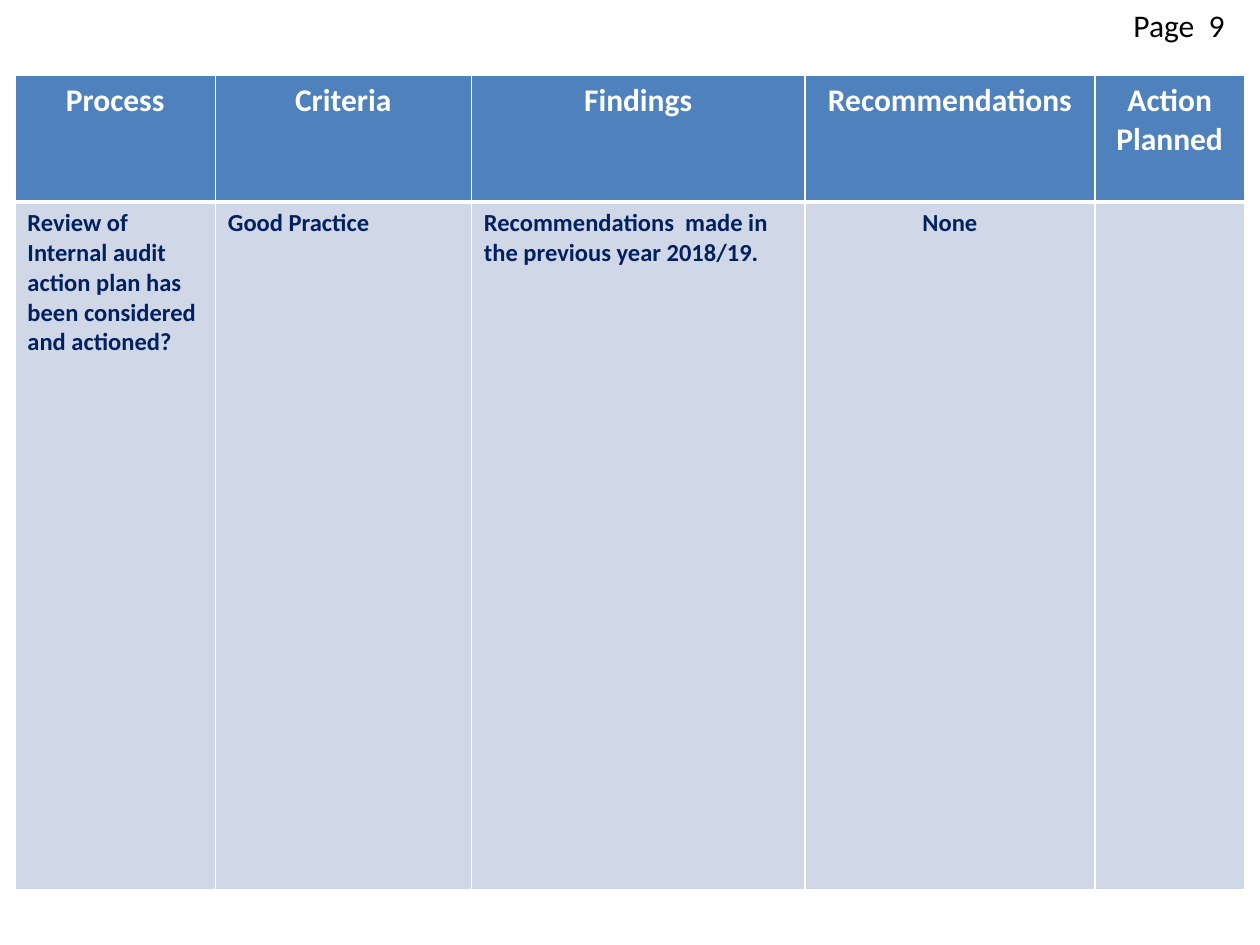
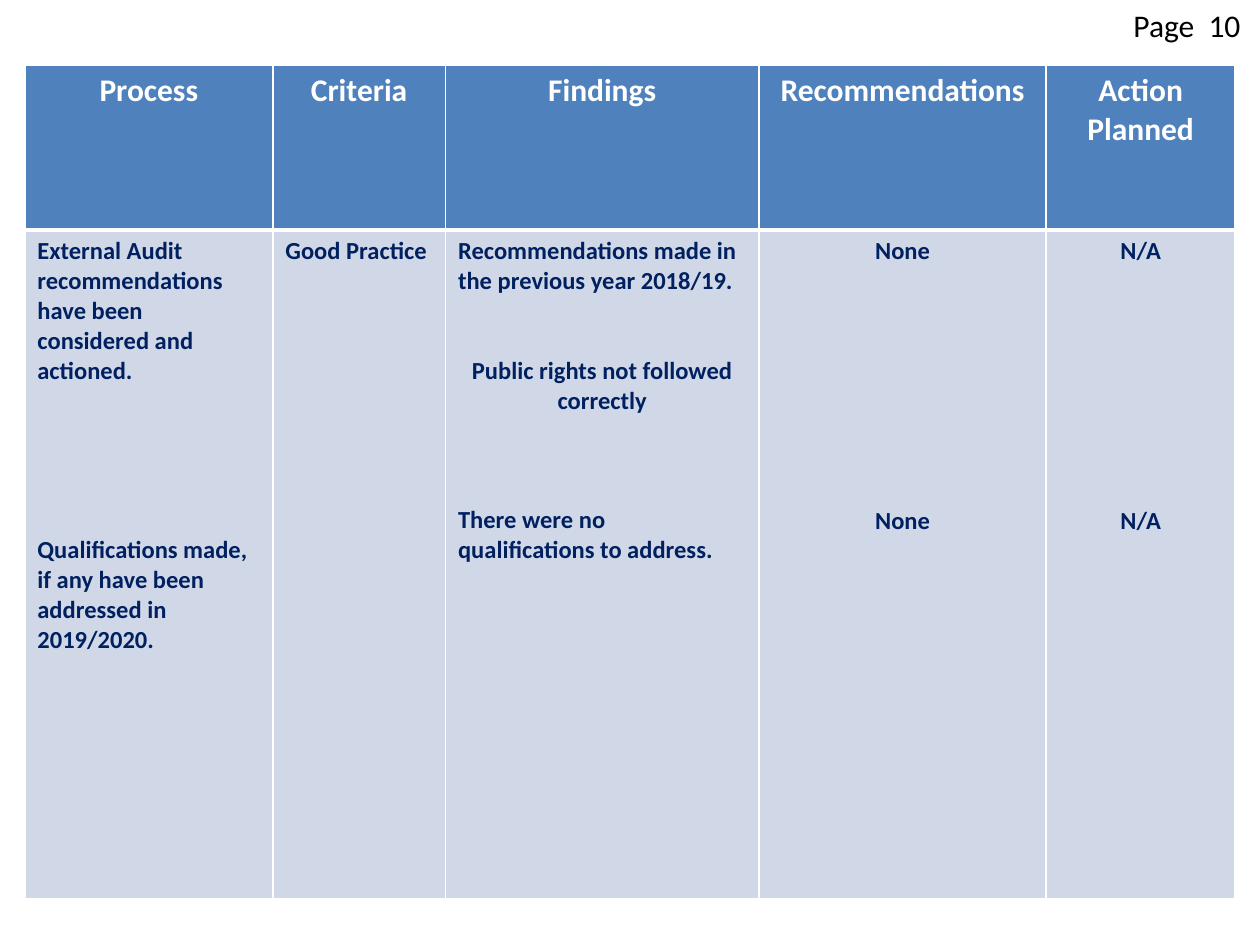
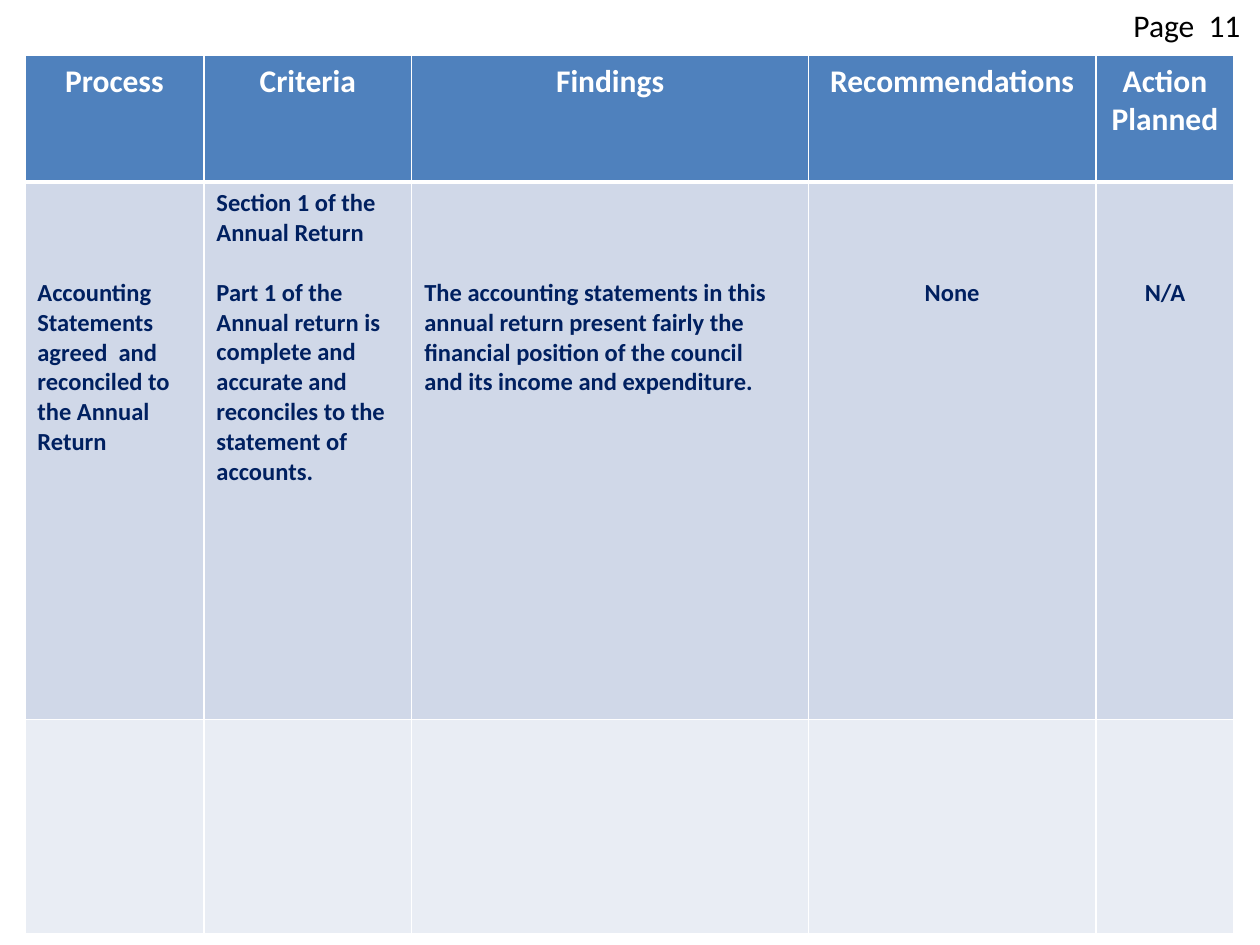
from lxml import etree
from pptx import Presentation
from pptx.dml.color import RGBColor
from pptx.enum.text import PP_ALIGN
from pptx.oxml.ns import qn
from pptx.util import Cm, Pt

LEFT, CENTER = PP_ALIGN.LEFT, PP_ALIGN.CENTER

# Shared style
FONT = "Calibri"
WHITE, BLACK, NAVY = "FFFFFF", "000000", "002060"
ROW_FILLS = ["4F81BD", "D0D8E8", "E9EDF4"]
HEADINGS = ["Process", "Criteria", "Findings", "Recommendations", "Action Planned"]
BODY_LINE = Pt(17.1)  # height of one 14 pt line
CELL_TOP = Cm(0.13)

# Each cell holds paragraphs: (text, lines of space above, alignment)
PAGES = [
    {
        "label": "Page  9",
        "at": (0.3, 1.52),
        "cols": [4.04, 5.16, 6.73, 5.84, 3.02],
        "rows": [2.55, 13.87],
        "findings": [
            [("Review of Internal audit action plan has been considered and actioned?", 0, LEFT)],
            [("Good Practice", 0, LEFT)],
            [("Recommendations  made in the previous year 2018/19.", 0, LEFT)],
            [("None", 0, CENTER)],
            [],
        ],
    },
    {
        "label": "Page  10",
        "at": (0.5, 1.32),
        "cols": [5, 3.48, 6.32, 5.79, 3.81],
        "rows": [3.32, 13.48],
        "findings": [
            [("External Audit", 0, LEFT),
             ("recommendations have been considered and actioned.", 0, LEFT),
             ("Qualifications made, if any have been addressed in 2019/2020.", 5, LEFT)],
            [("Good Practice", 0, LEFT)],
            [("Recommendations made in the previous year 2018/19.", 0, LEFT),
             ("Public rights not followed correctly", 2, CENTER),
             ("There were no qualifications to address.", 3, LEFT)],
            [("None", 0, CENTER), ("None", 8, CENTER)],
            [("N/A", 0, CENTER), ("N/A", 8, CENTER)],
        ],
    },
    {
        "label": "Page  11",
        "at": (0.5, 1.12),
        "cols": [3.61, 4.19, 8, 5.79, 2.79],
        "rows": [2.55, 10.84, 4.31],
        "findings": [
            [("Accounting Statements  agreed  and reconciled to the Annual Return", 3, LEFT)],
            [("Section 1 of the Annual Return", 0, LEFT),
             ("Part 1 of the Annual return is complete and accurate and reconciles "
              "to the statement of accounts.", 1, LEFT)],
            [("The accounting statements in this annual return present fairly the", 3, LEFT),
             ("financial position of the council", 0, LEFT),
             ("and its income and expenditure.", 0, LEFT)],
            [("None", 3, CENTER)],
            [("N/A", 3, CENTER)],
        ],
    },
]


def style_font(p, size, color, bold=False):
    p.font.name = FONT
    p.font.size = Pt(size)
    p.font.bold = bold
    p.font.color.rgb = RGBColor.from_string(color)


def add_borders(cell, widths):
    tc_pr = cell._tc.get_or_add_tcPr()
    for side, width in widths.items():
        ln = etree.SubElement(tc_pr, qn(f"a:ln{side}"), w=str(Pt(width)))
        solid = etree.SubElement(ln, qn("a:solidFill"))
        etree.SubElement(solid, qn("a:srgbClr"), val=WHITE)


prs = Presentation()
prs.slide_width, prs.slide_height = Cm(25.4), Cm(19.05)

for page in PAGES:
    s = prs.slides.add_slide(prs.slide_layouts[6])

    # Audit table
    cols, rows = page["cols"], page["rows"]
    left, top = page["at"]
    table = s.shapes.add_table(len(rows), len(cols), Cm(left), Cm(top),
                               Cm(sum(cols)), Cm(sum(rows))).table
    for column, width in zip(table.columns, cols):
        column.width = Cm(width)

    header = [[(text, 0, CENTER)] for text in HEADINGS]
    blank = [[] for _ in cols]
    contents = [header, page["findings"], blank]
    for i, height in enumerate(rows):
        table.rows[i].height = Cm(height)
        for j, paragraphs in enumerate(contents[i]):
            cell = table.cell(i, j)
            add_borders(cell, {"L": 1, "R": 1, "T": 3 if i == 1 else 1, "B": 3 if i == 0 else 1})
            cell.fill.solid()
            cell.fill.fore_color.rgb = RGBColor.from_string(ROW_FILLS[i])
            tf = cell.text_frame
            for n, (text, gap, align) in enumerate(paragraphs):
                p = tf.add_paragraph() if n else tf.paragraphs[0]
                p.text = text
                p.alignment = align
                if n:
                    p.space_before = gap * BODY_LINE
                else:
                    cell.margin_top = CELL_TOP + gap * BODY_LINE
                style_font(p, 14 if i else 18, NAVY if i else WHITE, bold=True)

    # Page label
    tf = s.shapes.add_textbox(Cm(22.6), 0, Cm(2.8), Cm(1.03)).text_frame
    tf.word_wrap = True
    p = tf.paragraphs[0]
    p.text = page["label"]
    style_font(p, 18, BLACK)

prs.save("out.pptx")
